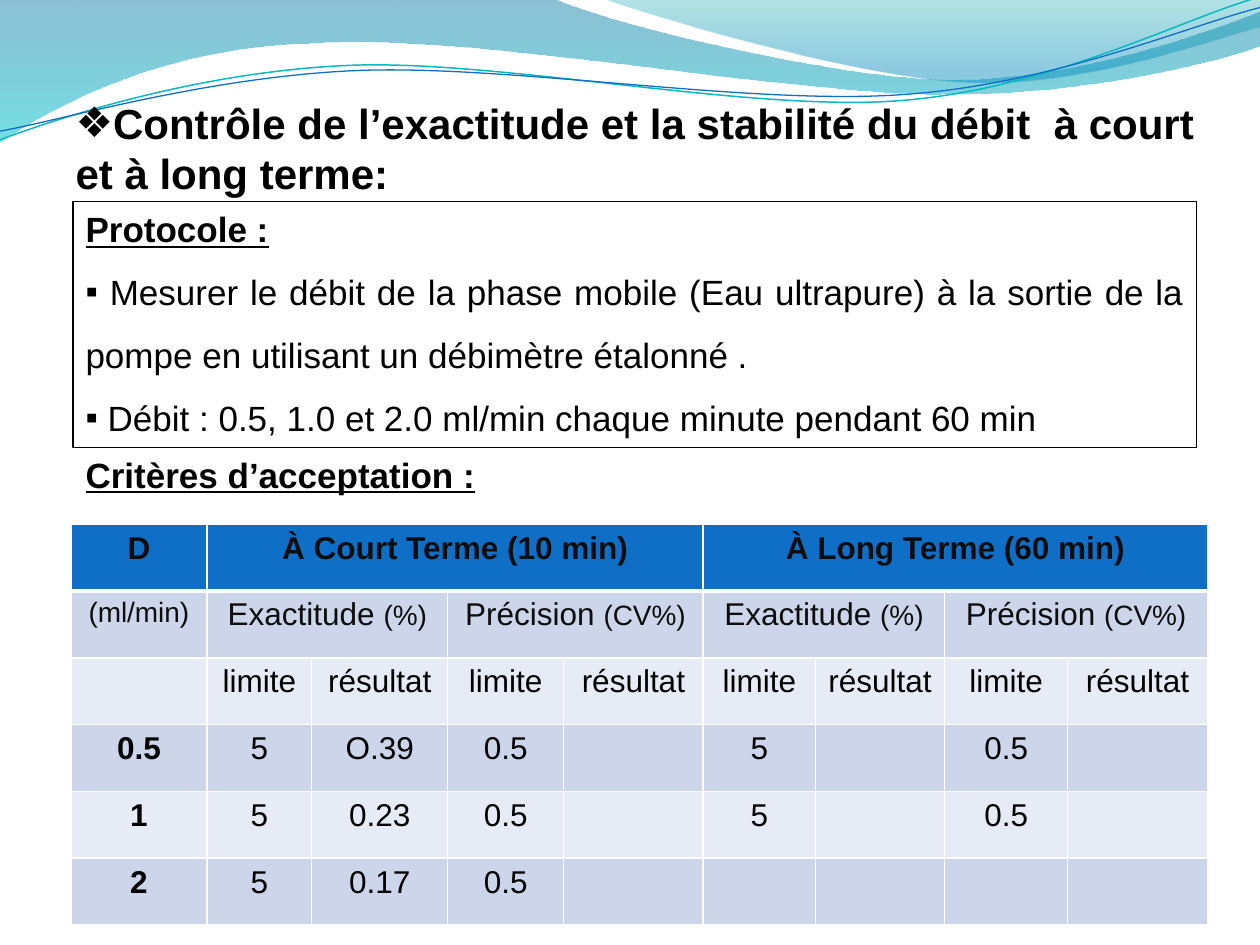
import pptx
import pptx.dml.color
import pptx.enum.shapes
import pptx.enum.text
import pptx.oxml.ns
import pptx.util
from lxml import etree

Pt = pptx.util.Pt
RGB = pptx.dml.color.RGBColor
ALIGN = pptx.enum.text.PP_ALIGN
ANCHOR = pptx.enum.text.MSO_ANCHOR
qn = pptx.oxml.ns.qn

BLACK = RGB(0x00, 0x00, 0x00)
WHITE = RGB(0xFF, 0xFF, 0xFF)
INK = RGB(0x0D, 0x0D, 0x0D)
BLUE = RGB(0x0F, 0x6F, 0xC6)
TEAL = RGB(0x0A, 0xB8, 0xBF)
BAND_DARK = RGB(0xCC, 0xD5, 0xEA)
BAND_LIGHT = RGB(0xE7, 0xEB, 0xF5)

# Content
TITLE = "Contrôle de l’exactitude et la stabilité du débit  à court et à long terme:"
PROTOCOL = "Protocole :"
STEPS = [
    " Mesurer le débit de la phase mobile (Eau ultrapure) à la sortie de la "
    "pompe en utilisant un débimètre étalonné .",
    " Débit : 0.5, 1.0 et 2.0 ml/min chaque minute pendant 60 min ",
]
CRITERIA = "Critères d’acceptation :"
TERMS = ["À Court Terme (10 min)", "À Long Terme (60 min)"]
MEASURES = [("Exactitude ", "(%)"), ("Précision ", "(CV%)")]
VALUES = ["limite", "résultat"]
RESULTS = [
    ["0.5", "5", "O.39", "0.5", "", "5", "", "0.5", ""],
    ["1", "5", "0.23", "0.5", "", "5", "", "0.5", ""],
    ["2", "5", "0.17", "0.5", "", "", "", "", ""],
]
COLUMNS = [77.8, 59.8, 77.8, 66.2, 79.8, 64.1, 73.9, 70.3, 79.9]
ROW_HEIGHT = 38.2

# Header waves: a start, then lines (x, y) or curves (two controls, end)
BANDS = [
    ([(0, 0), (316.8, -0.7), (342.7, 12.2, 478.1, 45.4, 545.8, 45.4),
      (614.2, 45.4, 689.8, 18.7, 720, 6.5), (720.7, 25.9),
      (707.8, 31.7, 626.4, 54.7, 537.1, 54), (447.8, 54, 275, 20.2, 185, 24.5),
      (92.9, 25.9, 33.1, 59.8, -0.7, 81.4)],
     [(0, RGB(0x00, 0x74, 0xA1), 45), (1, RGB(0x00, 0xC6, 0xCF), 55)]),
    ([(344.9, -0.7), (366.5, 7.9, 491, 44.6, 553.7, 46.8),
      (616.3, 49.7, 691.9, 23, 720, 15.1), (720, 0)],
     [(0, RGB(0x00, 0xA1, 0xA9), 30), (0.8, RGB(0x00, 0x8B, 0xBF), 45)]),
]
STROKES = [
    ([(0, 79.9), (34.6, 67, 113.8, 41, 199.4, 37.4),
      (284.4, 33.8, 427, 64.1, 513.4, 57.6),
      (599.8, 51.1, 675.4, 10.8, 718.6, -1.4)], TEAL, 0.85),
    ([(0, 74.9), (33.8, 69.1, 118.1, 43.9, 203.8, 40.3),
      (290.2, 36.7, 429.8, 60.5, 516.2, 54),
      (601.9, 48.2, 677.5, 15.1, 720, 4.3)], BLUE, 0.75),
]

HEADING = {"size": Pt(20), "bold": True, "underline": True}


def assign(target, values):
    for name, value in values.items():
        setattr(target, name, value)


def write(paragraph, text, font, color=BLACK):
    run = paragraph.add_run()
    run.text = text
    assign(run.font, {"name": "Arial", **font})
    run.font.color.rgb = color


def bullet(paragraph, mark):
    props = paragraph._p.get_or_add_pPr()
    for name in ("marL", "indent"):
        props.set(name, "0")
    etree.SubElement(props, qn("a:buFont"), typeface="Arial")
    etree.SubElement(props, qn("a:buChar"), char=mark)


def add_wave(shapes, segments, close):
    points = [(Pt(s[i]), Pt(s[i + 1])) for s in segments for i in range(0, len(s), 2)]
    builder = shapes.build_freeform(*points[0], scale=1.0)
    builder.add_line_segments(points[1:], close=close)
    wave = builder.convert_to_shape()
    wave.shadow.inherit = False
    # Each curve joins its three vertices into one cubic segment
    vertices = iter(list(wave._element.iter(qn("a:lnTo"))))
    for segment in segments[1:]:
        first = next(vertices)
        if len(segment) == 6:
            first.tag = qn("a:cubicBezTo")
            for vertex in (next(vertices), next(vertices)):
                first.append(vertex[0])
                vertex.getparent().remove(vertex)
    return wave


def add_waves(shapes):
    for segments, stops in BANDS:
        band = add_wave(shapes, segments, True)
        band.line.fill.background()
        band.fill.gradient()
        band.fill.gradient_angle = 270
        for stop, (position, color, opacity) in zip(band.fill.gradient_stops, stops):
            stop.position = position
            stop.color.rgb = color
            tint = stop._gs.find(qn("a:srgbClr"))
            etree.SubElement(tint, qn("a:alpha"), val=str(opacity * 1000))
    for segments, color, width in STROKES:
        stroke = add_wave(shapes, segments, False)
        stroke.fill.background()
        stroke.line.color.rgb = color
        stroke.line.width = Pt(width)


def add_title(shapes):
    title = shapes.title
    assign(title, {"left": Pt(36), "top": Pt(51.8), "width": Pt(653.8), "height": Pt(65.5)})
    assign(title.text_frame, {"vertical_anchor": ANCHOR.MIDDLE, "word_wrap": True,
                              "auto_size": pptx.enum.text.MSO_AUTO_SIZE.NONE})
    paragraph = title.text_frame.paragraphs[0]
    paragraph.alignment = ALIGN.JUSTIFY
    bullet(paragraph, "❖")
    write(paragraph, TITLE, {"size": Pt(24), "bold": True})
    shapes._spTree.append(title._element)  # in front of the waves


def add_protocol(shapes):
    protocol = shapes.add_shape(pptx.enum.shapes.MSO_SHAPE.RECTANGLE,
                                Pt(41.8), Pt(115.2), Pt(642), Pt(140.4))
    protocol.shadow.inherit = False
    protocol.fill.background()
    protocol.line.color.rgb = BLACK
    protocol.line.width = Pt(0.75)
    frame = protocol.text_frame
    assign(frame, {"word_wrap": True, "vertical_anchor": ANCHOR.TOP})
    frame.paragraphs[0].alignment = ALIGN.LEFT
    write(frame.paragraphs[0], PROTOCOL, HEADING)
    for step in STEPS:
        paragraph = frame.add_paragraph()
        assign(paragraph, {"alignment": ALIGN.JUSTIFY, "line_spacing": 1.5})
        bullet(paragraph, "▪")
        write(paragraph, step, {"size": Pt(20)})


def add_criteria(shapes):
    criteria = shapes.add_textbox(Pt(41.8), Pt(255.6), Pt(648), Pt(31.7)).text_frame
    criteria.word_wrap = True
    write(criteria.paragraphs[0], CRITERIA, HEADING)


def fill_cell(cell, parts, fill, color=INK, bold=False):
    cell.fill.solid()
    cell.fill.fore_color.rgb = fill
    paragraph = cell.text_frame.paragraphs[0]
    paragraph.alignment = ALIGN.CENTER
    for text, size in parts:
        if text:
            write(paragraph, text, {"size": Pt(size), "bold": bold}, color)


def border_cell(cell, widths):
    props = cell._tc.get_or_add_tcPr()
    for place, (side, width) in enumerate(widths.items()):
        edge = etree.Element(qn("a:" + side), w=str(Pt(width)))
        paint = etree.SubElement(edge, qn("a:solidFill"))
        etree.SubElement(paint, qn("a:srgbClr"), val=str(WHITE))
        props.insert(place, edge)


def add_limits(shapes):
    limits = shapes.add_table(3 + len(RESULTS), len(COLUMNS), Pt(40.5), Pt(299.5),
                              Pt(sum(COLUMNS)), Pt(ROW_HEIGHT * 6)).table
    for column, width in zip(limits.columns, COLUMNS):
        column.width = Pt(width)
    for row in limits.rows:
        row.height = Pt(ROW_HEIGHT)

    # Two merged heading rows
    fill_cell(limits.cell(0, 0), [("D", 18)], BLUE, bold=True)
    fill_cell(limits.cell(1, 0), [("(ml/min)", 16)], BAND_DARK)
    for i, term in enumerate(TERMS):
        limits.cell(0, 1 + 4 * i).merge(limits.cell(0, 4 + 4 * i))
        fill_cell(limits.cell(0, 1 + 4 * i), [(term, 18)], BLUE, bold=True)
    for i, (measure, unit) in enumerate(MEASURES * 2):
        limits.cell(1, 1 + 2 * i).merge(limits.cell(1, 2 + 2 * i))
        fill_cell(limits.cell(1, 1 + 2 * i), [(measure, 18), (unit, 16)], BAND_DARK)
    for c in range(len(COLUMNS)):
        border_cell(limits.cell(0, c), {"lnL": 1, "lnR": 1, "lnT": 1, "lnB": 3})

    # Column names and results
    for r, row in enumerate([[""] + VALUES * 4] + RESULTS, start=2):
        for c, text in enumerate(row):
            fill_cell(limits.cell(r, c), [(text, 18)],
                      BAND_DARK if r % 2 else BAND_LIGHT, BLACK, bold=c == 0)


def main():
    deck = pptx.Presentation()
    assign(deck, {"slide_width": Pt(720), "slide_height": Pt(540)})
    shapes = deck.slides.add_slide(deck.slide_layouts[5]).shapes
    for add_part in (add_waves, add_title, add_protocol, add_limits, add_criteria):
        add_part(shapes)
    deck.save("out.pptx")


if __name__ == "__main__":
    main()
